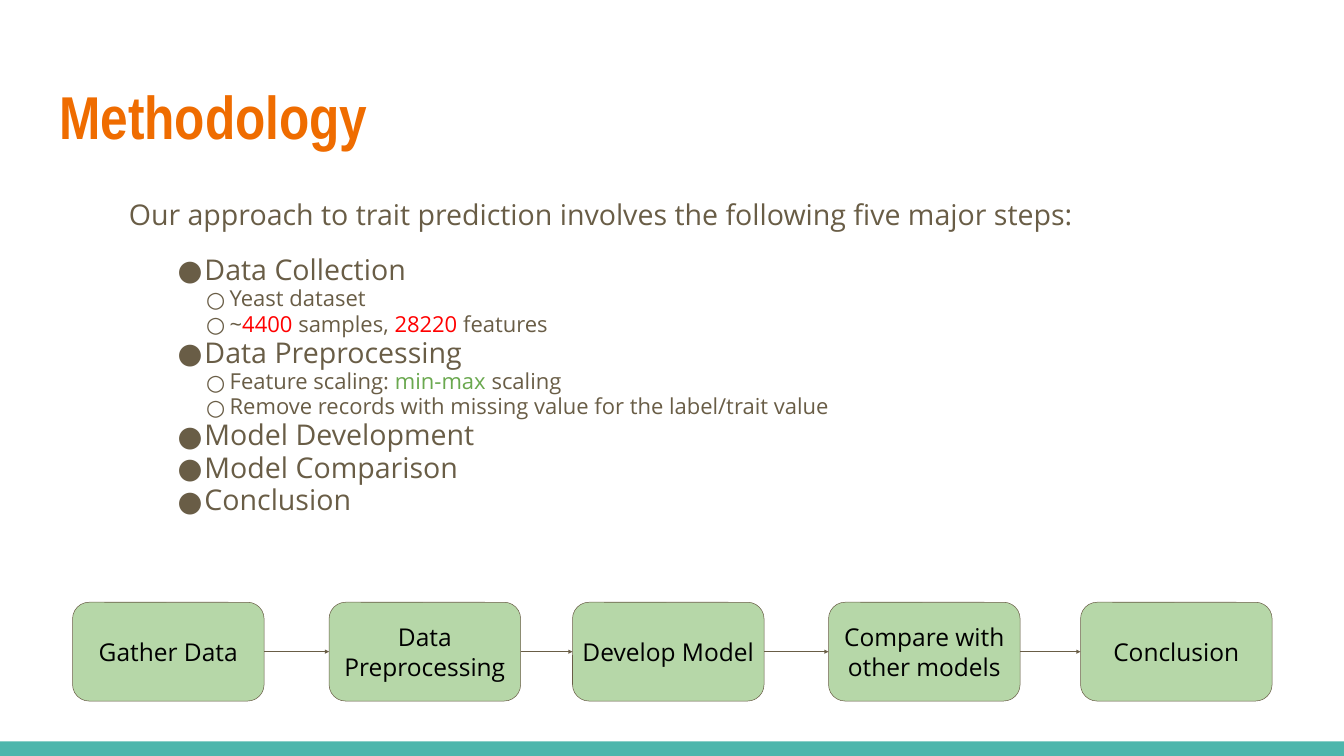
from itertools import pairwise

from lxml.etree import SubElement
from pptx import Presentation
from pptx.dml.color import RGBColor
from pptx.enum.shapes import MSO_CONNECTOR, MSO_SHAPE
from pptx.enum.text import MSO_ANCHOR, MSO_AUTO_SIZE, PP_ALIGN
from pptx.oxml.ns import qn
from pptx.util import Inches, Pt

# The slide is a grid of 80 columns by 45 rows with square cells
COLUMNS, ROWS = 80, 45
CELL = Inches(1 / 3)
TEXT_INSET, STEP_INSET = 0.8, 0.2

ORANGE, TEAL, BROWN = "EF6C00", "4DB6AC", "695D46"
BOX_GREEN, TEXT_GREEN, RED, BLACK = "B6D7A8", "6AA84F", "FF0000", "000000"
TITLE_FONT, BODY_FONT = "Arial Narrow", "Open Sans"

INTRO = "Our approach to trait prediction involves the following five major steps:"
# Each item: level, then its runs as (text, colour)
OUTLINE = [
    (0, [("Data Collection", BROWN)]),
    (1, [("Yeast dataset", BROWN)]),
    (1, [("~", BROWN), ("4400", RED), (" samples, ", BROWN),
         ("28220", RED), (" features", BROWN)]),
    (0, [("Data Preprocessing", BROWN)]),
    (1, [("Feature scaling: ", BROWN), ("min-max", TEXT_GREEN), (" scaling", BROWN)]),
    (1, [("Remove records with missing value for the label/trait value", BROWN)]),
    (0, [("Model Development", BROWN)]),
    (0, [("Model Comparison", BROWN)]),
    (0, [("Conclusion", BROWN)]),
]
# Per level: bullet, text size, left margin and hanging indent in cells
LEVELS = [("●", 40.8, 4.5, 1.6), ("○", 31.4, 6, 1.4)]
# Each step: column offset within the flow, label
STEPS = [
    (0, "Gather Data"),
    (15.27, "Data Preprocessing"),
    (29.76, "Develop Model"),
    (45, "Compare with other models"),
    (60, "Conclusion"),
]
STEP_WIDTH = 11.4


def cells(count):
    return round(count * CELL)


def colour(value):
    return RGBColor.from_string(value)


def set_font(font, name, size, value, bold=False):
    font.name, font.size, font.bold = name, Pt(size), bold
    font.color.rgb = colour(value)


def set_frame(frame, inset, anchor=MSO_ANCHOR.TOP):
    frame.word_wrap = True
    frame.auto_size = MSO_AUTO_SIZE.NONE
    frame.vertical_anchor = anchor
    frame.margin_left = frame.margin_right = cells(inset)
    frame.margin_top = frame.margin_bottom = cells(inset)


def set_bullet(paragraph, character, left, hanging):
    properties = paragraph._p.get_or_add_pPr()
    properties.set("marL", str(cells(left)))
    properties.set("indent", str(-cells(hanging)))
    bullet_colour = SubElement(properties, qn("a:buClr"))
    SubElement(bullet_colour, qn("a:srgbClr"), val=BROWN)
    SubElement(properties, qn("a:buFont"), typeface=BODY_FONT)
    SubElement(properties, qn("a:buChar"), char=character)


def add_block(slide, preset, box, fill):
    shape = slide.shapes.add_shape(preset, *map(cells, box))
    shape.shadow.inherit = False
    shape.fill.solid()
    shape.fill.fore_color.rgb = colour(fill)
    return shape


def place_title(slide, box, text):
    title = slide.shapes.title
    title.left, title.top, title.width, title.height = map(cells, box)
    set_frame(title.text_frame, TEXT_INSET)
    title.text_frame.text = text
    paragraph = title.text_frame.paragraphs[0]
    paragraph.alignment = PP_ALIGN.LEFT
    paragraph.line_spacing = 1.0
    paragraph.space_before = Pt(0)
    set_font(paragraph.font, TITLE_FONT, 86.4, ORANGE, bold=True)


def place_outline(slide, box):
    frame = slide.shapes.add_textbox(*map(cells, box)).text_frame
    set_frame(frame, TEXT_INSET)
    intro = frame.paragraphs[0]
    intro.text = INTRO
    intro.line_spacing = 0.95
    set_font(intro.font, BODY_FONT, LEVELS[0][1], BROWN)

    for index, (level, runs) in enumerate(OUTLINE):
        character, size, left, hanging = LEVELS[level]
        paragraph = frame.add_paragraph()
        paragraph.level = level
        paragraph.line_spacing = 0.95
        paragraph.space_before = Pt(0 if index else 32)
        set_bullet(paragraph, character, left, hanging)
        set_font(paragraph.font, BODY_FONT, size, BROWN)
        for text, value in runs:
            run = paragraph.add_run()
            run.text = text
            if value != BROWN:
                run.font.color.rgb = colour(value)


def add_step(slide, box, label):
    step = add_block(slide, MSO_SHAPE.ROUNDED_RECTANGLE, box, BOX_GREEN)
    step.line.color.rgb = colour(BROWN)
    step.line.width = Pt(0.75)
    set_frame(step.text_frame, STEP_INSET, MSO_ANCHOR.MIDDLE)
    step.text_frame.text = label
    paragraph = step.text_frame.paragraphs[0]
    paragraph.alignment = PP_ALIGN.CENTER
    set_font(paragraph.font, BODY_FONT, 35, BLACK)
    return step


def add_arrow(slide, start, end):
    arrow = slide.shapes.add_connector(MSO_CONNECTOR.STRAIGHT, 0, 0, 0, 0)
    arrow.begin_connect(start, 3)
    arrow.end_connect(end, 1)
    arrow.line.color.rgb = colour(BROWN)
    arrow.line.width = Pt(0.75)
    SubElement(arrow.line._get_or_add_ln(), qn("a:tailEnd"), type="triangle")
    SubElement(arrow._element.spPr, qn("a:effectLst"))


def place_flow(slide, box):
    left, top, _, height = box
    steps = [add_step(slide, (left + offset, top, STEP_WIDTH, height), label)
             for offset, label in STEPS]
    for start, end in pairwise(steps):
        add_arrow(slide, start, end)


def main():
    presentation = Presentation()
    presentation.slide_width = cells(COLUMNS)
    presentation.slide_height = cells(ROWS)
    slide = presentation.slides.add_slide(presentation.slide_layouts[5])

    # Footer band
    band = add_block(slide, MSO_SHAPE.RECTANGLE, (0, 44.13, COLUMNS, 0.87), TEAL)
    band.line.fill.background()
    # Heading, outline and process flow
    place_title(slide, (2.73, 3.9, 74.55, 6.18), "Methodology")
    place_outline(slide, (6.87, 11.07, 68.37, 21.42))
    place_flow(slide, (4.32, 35.85, 71.4, 5.88))

    presentation.save("out.pptx")


if __name__ == "__main__":
    main()
